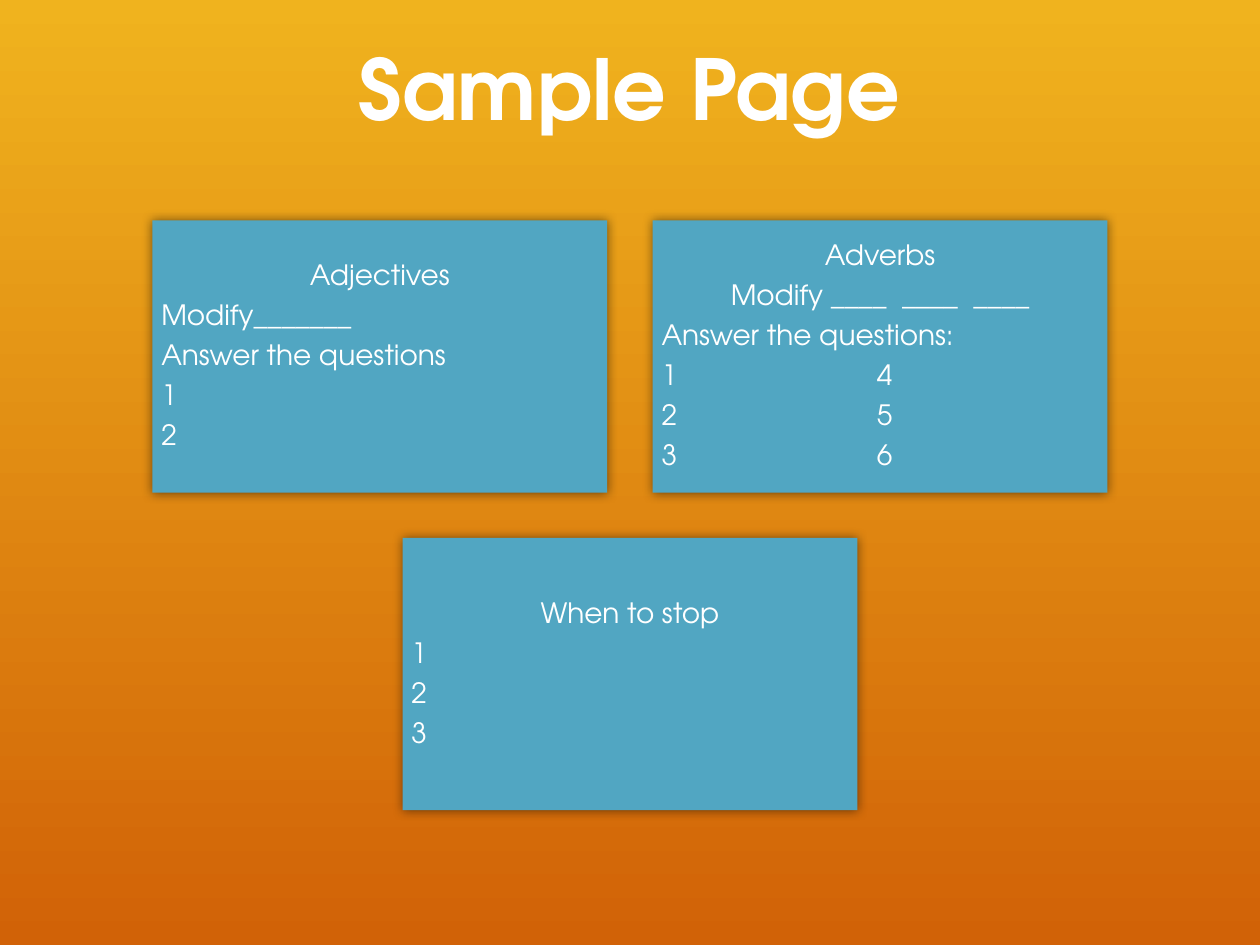
from dataclasses import dataclass

from lxml.etree import SubElement
from pptx import Presentation
from pptx.dml.color import RGBColor
from pptx.enum.shapes import MSO_SHAPE
from pptx.enum.text import MSO_ANCHOR, PP_ALIGN
from pptx.oxml.ns import qn
from pptx.slide import Slide
from pptx.text.text import _Paragraph
from pptx.util import Inches, Pt

FONT = "TeX Gyre Adventor"
WHITE = RGBColor(0xFF, 0xFF, 0xFF)
BLUE = RGBColor(0x51, 0xA6, 0xC2)
GOLD = RGBColor(0xF0, 0xB3, 0x1E)
RUST = RGBColor(0xD1, 0x62, 0x07)

WIDE, HIGH = 3.61, 2.16
GAP = 0.36
LEFT = (10 - 2 * WIDE - GAP) / 2
TOP = 1.75


@dataclass
class Card:
    left: float
    top: float
    heads: list[str]
    lines: list[str]


CARDS = [
    Card(LEFT, TOP, ["Adjectives"],
         ["Modify_______", "Answer the questions", "1", "2"]),
    Card(LEFT + WIDE + GAP, TOP, ["Adverbs", "Modify ____  ____  ____"],
         ["Answer the questions:", "1\t4", "2\t5", "3\t6"]),
    Card((10 - WIDE) / 2, TOP + HIGH + GAP, ["When to stop"], ["1", "2", "3"]),
]


def style(para: _Paragraph, size: float, bold: bool = False) -> None:
    for run in para.runs:
        run.font.name = FONT
        run.font.size = Pt(size)
        run.font.bold = bold
        run.font.color.rgb = WHITE


def add_tab(para: _Paragraph, pos: float) -> None:
    tabs = SubElement(para._p.get_or_add_pPr(), qn("a:tabLst"))
    SubElement(tabs, qn("a:tab"), pos=str(Inches(pos)), algn="l")


def add_glow(shape) -> None:
    shape.shadow.inherit = False
    effects = shape._element.spPr.find(qn("a:effectLst"))
    shadow = SubElement(effects, qn("a:outerShdw"), blurRad=str(Pt(6)),
                        dist="0", dir="0", rotWithShape="0")
    color = SubElement(shadow, qn("a:srgbClr"), val="000000")
    SubElement(color, qn("a:alpha"), val="50000")


def draw_card(slide: Slide, card: Card) -> None:
    box = slide.shapes.add_shape(
        MSO_SHAPE.RECTANGLE, Inches(card.left), Inches(card.top),
        Inches(WIDE), Inches(HIGH))
    box.fill.solid()
    box.fill.fore_color.rgb = BLUE
    box.line.fill.background()
    add_glow(box)
    frame = box.text_frame
    frame.word_wrap = True
    frame.vertical_anchor = MSO_ANCHOR.MIDDLE
    frame.margin_left = frame.margin_right = Inches(0.07)
    frame.margin_top = frame.margin_bottom = Inches(0.07)
    frame.text = "\n".join(card.heads + card.lines)
    for i, para in enumerate(frame.paragraphs):
        if "\t" in para.text:
            add_tab(para, 1.71)
        head = i < len(card.heads)
        para.alignment = PP_ALIGN.CENTER if head else PP_ALIGN.LEFT
        para.line_spacing = 0.9
        para.space_after = Pt(5.6)
        style(para, 16)


def draw_title(slide: Slide, text: str) -> None:
    title = slide.shapes.title
    title.left, title.top = Inches(0.85), Inches(0.1)
    title.width, title.height = Inches(8.29), Inches(1.25)
    frame = title.text_frame
    frame.text = text
    frame.vertical_anchor = MSO_ANCHOR.MIDDLE
    para = frame.paragraphs[0]
    para.alignment = PP_ALIGN.CENTER
    para.line_spacing = 0.95
    style(para, 48, bold=True)


def paint(slide: Slide) -> None:
    fill = slide.background.fill
    fill.gradient()
    fill.gradient_angle = 270
    for stop, color in zip(fill.gradient_stops, (GOLD, RUST)):
        stop.color.rgb = color


def main() -> None:
    deck = Presentation()
    deck.slide_width, deck.slide_height = Inches(10), Inches(7.5)
    slide = deck.slides.add_slide(deck.slide_layouts[5])
    paint(slide)
    draw_title(slide, "Sample Page")
    for card in CARDS:
        draw_card(slide, card)
    deck.save("out.pptx")


if __name__ == "__main__":
    main()
